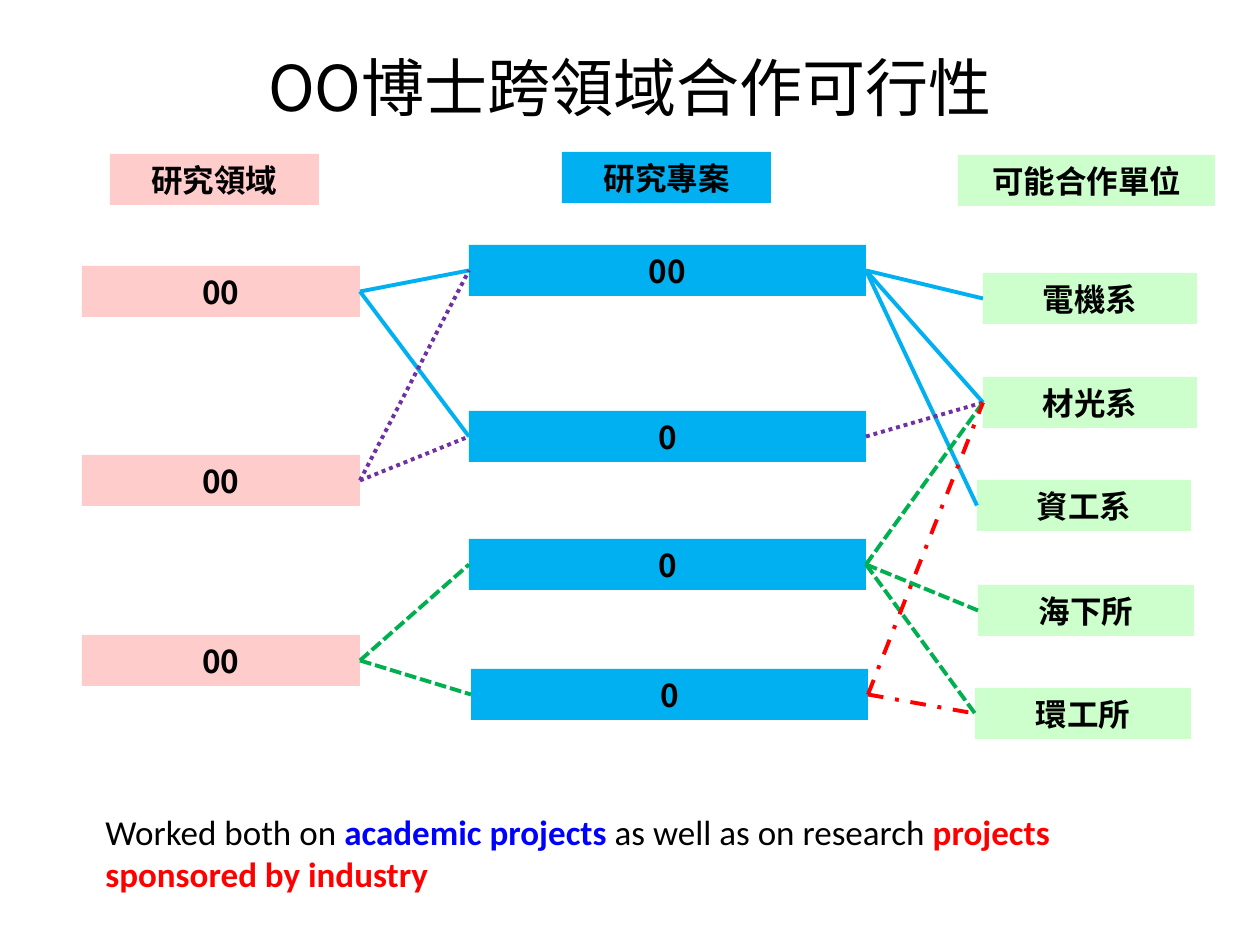
"""Build the slide that links research fields, projects and partner units."""
from dataclasses import dataclass

from pptx import Presentation, util as u
from pptx.dml.color import RGBColor
from pptx.enum import dml, shapes, text
from pptx.oxml.ns import qn

SCALE = 914400 / 126
DASH = dml.MSO_LINE


@dataclass(frozen=True)
class Theme:
    """Colours, fonts and type sizes."""
    ink: str = "000000"
    pink: str = "FFCCCC"
    sky: str = "00B0F0"
    mint: str = "CCFFCC"
    green: str = "00B050"
    plum: str = "7030A0"
    red: str = "FF0000"
    blue: str = "0000FF"
    cjk: str = "Noto Sans CJK SC"
    latin: str = "Calibri"
    title: int = 36
    label: int = 18
    note: int = 20
    line: float = 2.25


@dataclass(frozen=True)
class Box:
    """One filled label, in px."""
    key: str
    words: str
    fill: str
    left: int
    top: int
    width: int
    height: int = 51


@dataclass(frozen=True)
class Link:
    """Lines of one style from one box to several others."""
    start: str
    ends: str
    color: str
    dash: DASH | None = None


T = Theme()

BOXES = [
    Box("head_a", "研究領域", T.pink, 110, 154, 209),
    Box("head_b", "研究專案", T.sky, 562, 152, 209),
    Box("head_c", "可能合作單位", T.mint, 958, 155, 257),
    *(Box(f"a{i}", "00", T.pink, 82, top, 278)
      for i, top in enumerate((266, 455, 635), 1)),
    Box("b1", "00", T.sky, 469, 245, 397),
    Box("b2", "0", T.sky, 469, 411, 397),
    Box("b3", "0", T.sky, 469, 539, 397),
    Box("b4", "0", T.sky, 471, 669, 397),
    Box("c1", "電機系", T.mint, 983, 273, 214),
    Box("c2", "材光系", T.mint, 983, 377, 214),
    Box("c3", "資工系", T.mint, 977, 480, 214),
    Box("c4", "海下所", T.mint, 978, 585, 216),
    Box("c5", "環工所", T.mint, 975, 688, 216),
]

LINKS = [
    Link("a1", "b1 b2", T.sky),
    Link("a2", "b1 b2", T.plum, DASH.ROUND_DOT),
    Link("a3", "b3 b4", T.green, DASH.SQUARE_DOT),
    Link("b1", "c1 c2 c3", T.sky),
    Link("b2", "c2", T.plum, DASH.ROUND_DOT),
    Link("b3", "c2 c4 c5", T.green, DASH.SQUARE_DOT),
    Link("b4", "c2 c5", T.red, DASH.DASH_DOT),
]


def px(num: int) -> u.Emu:
    """Turn px into EMU."""
    return u.Emu(round(num * SCALE))


def write(para, words: str, *, size: int, font: str, color: str = T.ink,
          bold: bool = False, align=text.PP_ALIGN.LEFT) -> None:
    """Add a run to a paragraph."""
    para.alignment = align
    run = para.add_run()
    run.text = words
    run.font.size = u.Pt(size)
    run.font.bold = bold
    run.font.color.rgb = RGBColor.from_string(color)
    run.font.name = font
    east = run.font._element.makeelement(qn("a:ea"), {"typeface": font})
    run.font._element.append(east)


def panel(slide, left: int, top: int, width: int, height: int, anchor):
    """Add a wrapping text box and return its first paragraph."""
    frame = slide.shapes.add_textbox(*map(px, (left, top, width, height))).text_frame
    frame.word_wrap = True
    frame.vertical_anchor = anchor
    return frame.paragraphs[0]


def draw_box(slide, box: Box):
    """Draw one label and return its shape."""
    area = map(px, (box.left, box.top, box.width, box.height))
    shape = slide.shapes.add_shape(shapes.MSO_SHAPE.RECTANGLE, *area)
    shape.shadow.inherit = False
    shape.fill.solid()
    shape.fill.fore_color.rgb = RGBColor.from_string(box.fill)
    shape.line.fill.background()
    frame = shape.text_frame
    frame.word_wrap = True
    frame.vertical_anchor = text.MSO_ANCHOR.MIDDLE
    write(frame.paragraphs[0], box.words, size=T.label, font=T.cjk, bold=True,
          align=text.PP_ALIGN.CENTER)
    return shape


def draw_link(slide, link: Link, nodes: dict) -> None:
    """Join the right side of the start box to the left side of each end."""
    for end in link.ends.split():
        wire = slide.shapes.add_connector(shapes.MSO_CONNECTOR.STRAIGHT, 0, 0, 0, 0)
        wire.begin_connect(nodes[link.start], 3)
        wire.end_connect(nodes[end], 1)
        wire.line.color.rgb = RGBColor.from_string(link.color)
        wire.line.width = u.Pt(T.line)
        if link.dash:
            wire.line.dash_style = link.dash
        props = wire._element.spPr
        props.append(props.makeelement(qn("a:effectLst"), {}))


def main() -> None:
    """Build and save the deck."""
    deck = Presentation()
    deck.slide_width, deck.slide_height = px(1260), px(945)
    slide = deck.slides.add_slide(deck.slide_layouts[6])
    head = panel(slide, 63, 8, 1134, 157, text.MSO_ANCHOR.MIDDLE)
    write(head, "OO博士跨領域合作可行性", size=T.title, font=T.cjk,
          align=text.PP_ALIGN.CENTER)
    nodes = {box.key: draw_box(slide, box) for box in BOXES}
    for link in LINKS:
        draw_link(slide, link, nodes)
    note = panel(slide, 93, 804, 1074, 97, text.MSO_ANCHOR.TOP)
    for words, color, bold in (
        ("Worked both on ", T.ink, False),
        ("academic projects ", T.blue, True),
        ("as well as on research ", T.ink, False),
        ("projects sponsored by industry", T.red, True),
    ):
        write(note, words, size=T.note, font=T.latin, color=color, bold=bold)
    deck.save("out.pptx")


if __name__ == "__main__":
    main()
